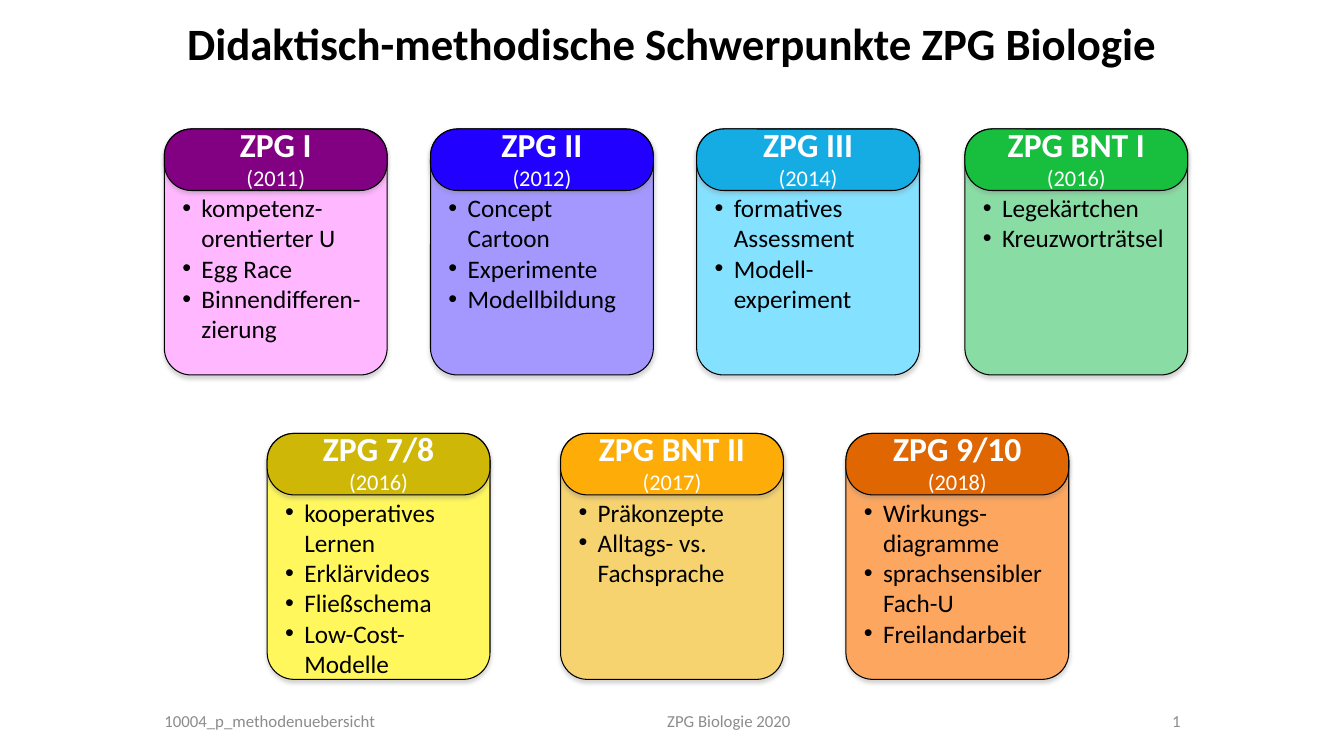
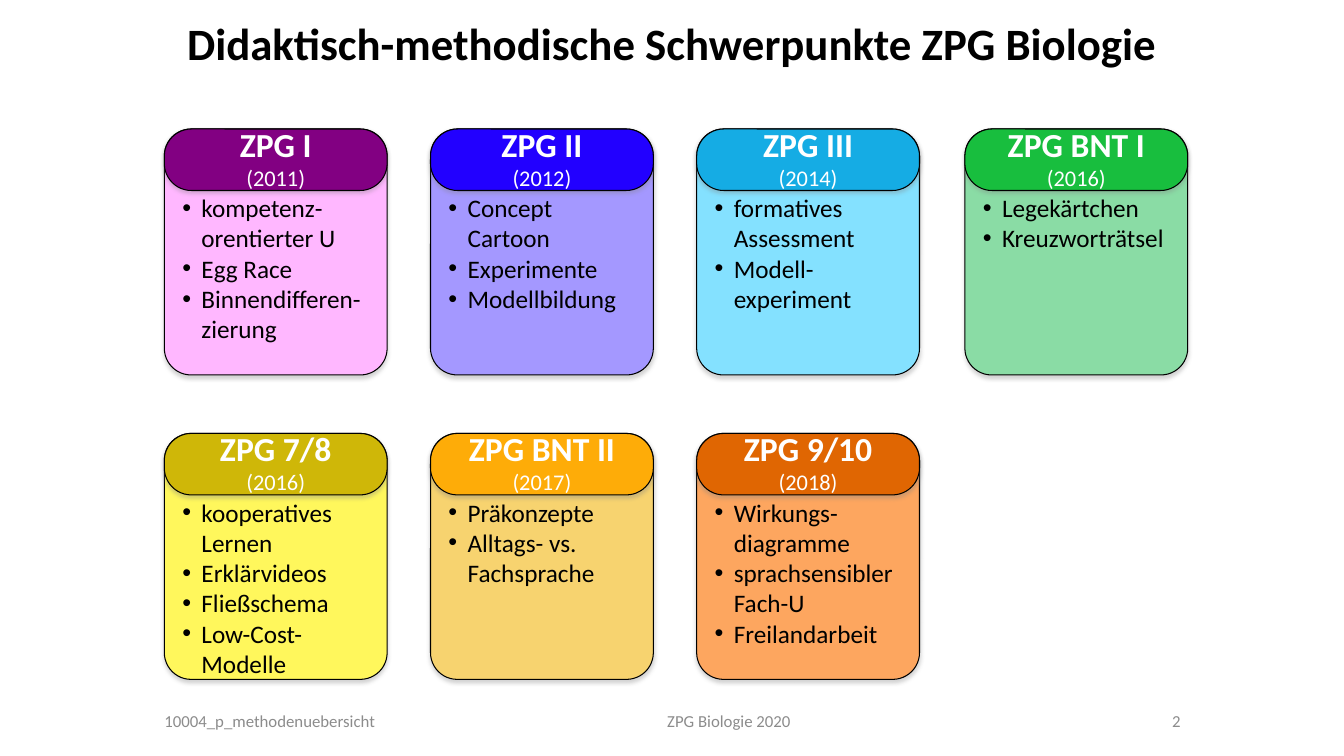
from lxml import etree
from pptx import Presentation
from pptx.dml.color import RGBColor
from pptx.enum.shapes import MSO_SHAPE
from pptx.enum.text import MSO_ANCHOR, MSO_AUTO_SIZE, PP_ALIGN
from pptx.oxml.ns import qn
from pptx.util import Emu, Pt

ROUNDED = MSO_SHAPE.ROUNDED_RECTANGLE
CENTER, LEFT = PP_ALIGN.CENTER, PP_ALIGN.LEFT
TOP, MIDDLE = MSO_ANCHOR.TOP, MSO_ANCHOR.MIDDLE
NO_FIT, GROW = MSO_AUTO_SIZE.NONE, MSO_AUTO_SIZE.SHAPE_TO_FIT_TEXT

PX = 9144  # 100 px to the inch
SLIDE_W, SLIDE_H = 1333, 750
TITLE_ONLY = 5

CARD_W, CARD_H, HEAD_H = 221, 244, 61
ROW_1, ROW_2 = 128, 430
COLUMNS = (163, 427, 691, 957)
CENTERED_COLUMNS = (265, 556, 839)

TITLE = "Didaktisch-methodische Schwerpunkte ZPG Biologie"
FILE_NAME = "10004_p_methodenuebersicht"
COURSE = "ZPG Biologie 2020"

# name, year, header colour, body colour, topics
UPPER_CARDS = [
    ("ZPG I", 2011, "820082", "FFB7FF",
     ["kompetenz-orentierter U", "Egg Race", "Binnendifferen-zierung"]),
    ("ZPG II", 2012, "2200FF", "A498FF",
     ["Concept Cartoon", "Experimente", "Modellbildung"]),
    ("ZPG III", 2014, "15ACE4", "84E1FF",
     ["formatives Assessment", "Modell-experiment"]),
    ("ZPG BNT I", 2016, "18BE3E", "8ADCA5",
     ["Legekärtchen", "Kreuzworträtsel"]),
]
LOWER_CARDS = [
    ("ZPG 7/8", 2016, "CFB708", "FFF75C",
     ["kooperatives Lernen", "Erklärvideos", "Fließschema",
      "Low-Cost-Modelle"]),
    ("ZPG BNT II", 2017, "FEAC08", "F7D36F",
     ["Präkonzepte", "Alltags- vs. Fachsprache"]),
    ("ZPG 9/10", 2018, "E06602", "FDA65F",
     ["Wirkungs-diagramme", "sprachsensibler Fach-U", "Freilandarbeit"]),
]


def px(n):
    return Emu(n * PX)


def rgb(code):
    return RGBColor.from_string(code)


def add_xml(parent, tag, **attributes):
    return etree.SubElement(parent, qn(tag),
                            {k: str(v) for k, v in attributes.items()})


class Deck:
    font = "Calibri"
    text_color, head_text, footer_color = "000000", "FFFFFF", "8C8C8C"
    line_color, shadow_color = "000000", "808080"

    def __init__(self):
        self.prs = Presentation()
        self.prs.slide_width, self.prs.slide_height = px(SLIDE_W), px(SLIDE_H)
        self.slide = None

    def new_slide(self, title):
        layout = self.prs.slide_layouts[TITLE_ONLY]
        self.slide = self.prs.slides.add_slide(layout)
        sp = self.slide.shapes.title
        sp.left, sp.top, sp.width, sp.height = map(px, (0, 11, SLIDE_W, 64))
        tf = sp.text_frame
        tf.auto_size, tf.vertical_anchor = NO_FIT, TOP
        self.set_text(tf.paragraphs[0], title, 32, self.text_color, CENTER,
                      True)

    def set_text(self, p, text, size, color, align=LEFT, bold=False):
        p.text = text
        p.alignment = align
        p.font.name, p.font.size, p.font.bold = self.font, Pt(size), bold
        p.font.color.rgb = rgb(color)

    def box(self, x, y, w, h, fill, corner):
        """Add an outlined rounded rectangle with a soft shadow below it."""
        sp = self.slide.shapes.add_shape(ROUNDED, px(x), px(y), px(w), px(h))
        sp.adjustments[0] = corner
        sp.fill.solid()
        sp.fill.fore_color.rgb = rgb(fill)
        sp.line.color.rgb = rgb(self.line_color)
        sp.line.width = Pt(0.75)
        sp.shadow.inherit = False
        effects = sp.element.spPr.find(qn("a:effectLst"))
        shadow = add_xml(effects, "a:outerShdw", blurRad=Pt(3.1),
                         dist=Pt(1.8), dir=90 * 60000, rotWithShape=0)
        color = add_xml(shadow, "a:srgbClr", val=self.shadow_color)
        add_xml(color, "a:alpha", val=35000)
        return sp

    def text_box(self, x, y, w, h):
        sp = self.slide.shapes.add_textbox(px(x), px(y), px(w), px(h))
        sp.text_frame.word_wrap = True
        return sp.text_frame

    def header(self, x, y, name, year, fill):
        tf = self.box(x, y, CARD_W, HEAD_H, fill, 0.44).text_frame
        tf.word_wrap, tf.vertical_anchor = True, MIDDLE
        tf.margin_left = tf.margin_right = px(10)
        tf.margin_top, tf.margin_bottom = px(0), px(5)
        self.set_text(tf.paragraphs[0], name, 24, self.head_text, CENTER, True)
        self.set_text(tf.add_paragraph(), f"({year})", 16, self.head_text,
                      CENTER)

    def bullets(self, x, y, items):
        tf = self.text_box(x, y, 204, 162)
        tf.auto_size = GROW
        for i, item in enumerate(items):
            p = tf.add_paragraph() if i else tf.paragraphs[0]
            pPr = p._p.get_or_add_pPr()
            pPr.set("marL", str(px(19)))
            pPr.set("indent", str(px(-19)))
            add_xml(pPr, "a:buFont", typeface="Arial")
            add_xml(pPr, "a:buChar", char="•")
            self.set_text(p, item, 18, self.text_color)

    def card(self, x, y, name, year, head_fill, body_fill, topics):
        self.box(x, y, CARD_W, CARD_H, body_fill, 0.12)
        self.header(x, y, name, year, head_fill)
        self.bullets(x + 8, y + 58, topics)

    def card_row(self, columns, y, cards):
        for x, card in zip(columns, cards):
            self.card(x, y, *card)

    def footer(self):
        """Add file name, course and slide number, set apart by tab stops."""
        tf = self.text_box(0, 695, SLIDE_W, 40)
        tf.vertical_anchor, tf.margin_left = MIDDLE, px(163)
        p = tf.paragraphs[0]
        tabs = add_xml(p._p.get_or_add_pPr(), "a:tabLst")
        for stop, align in ((560, "ctr"), (1008, "r")):
            add_xml(tabs, "a:tab", pos=px(stop), algn=align)
        self.set_text(p, f"{FILE_NAME}\t{COURSE}\t", 12, self.footer_color)
        field = add_xml(p._p, "a:fld", type="slidenum",
                        id="{B6F15528-21DE-4FAA-801E-634DDDAF4B2B}")
        add_xml(field, "a:rPr", lang="de-DE")
        add_xml(field, "a:t").text = str(len(self.prs.slides))


def main():
    deck = Deck()
    for lower_columns in (CENTERED_COLUMNS, COLUMNS):
        deck.new_slide(TITLE)
        deck.card_row(COLUMNS, ROW_1, UPPER_CARDS)
        deck.card_row(lower_columns, ROW_2, LOWER_CARDS)
        deck.footer()
    deck.prs.save("out.pptx")


if __name__ == "__main__":
    main()
